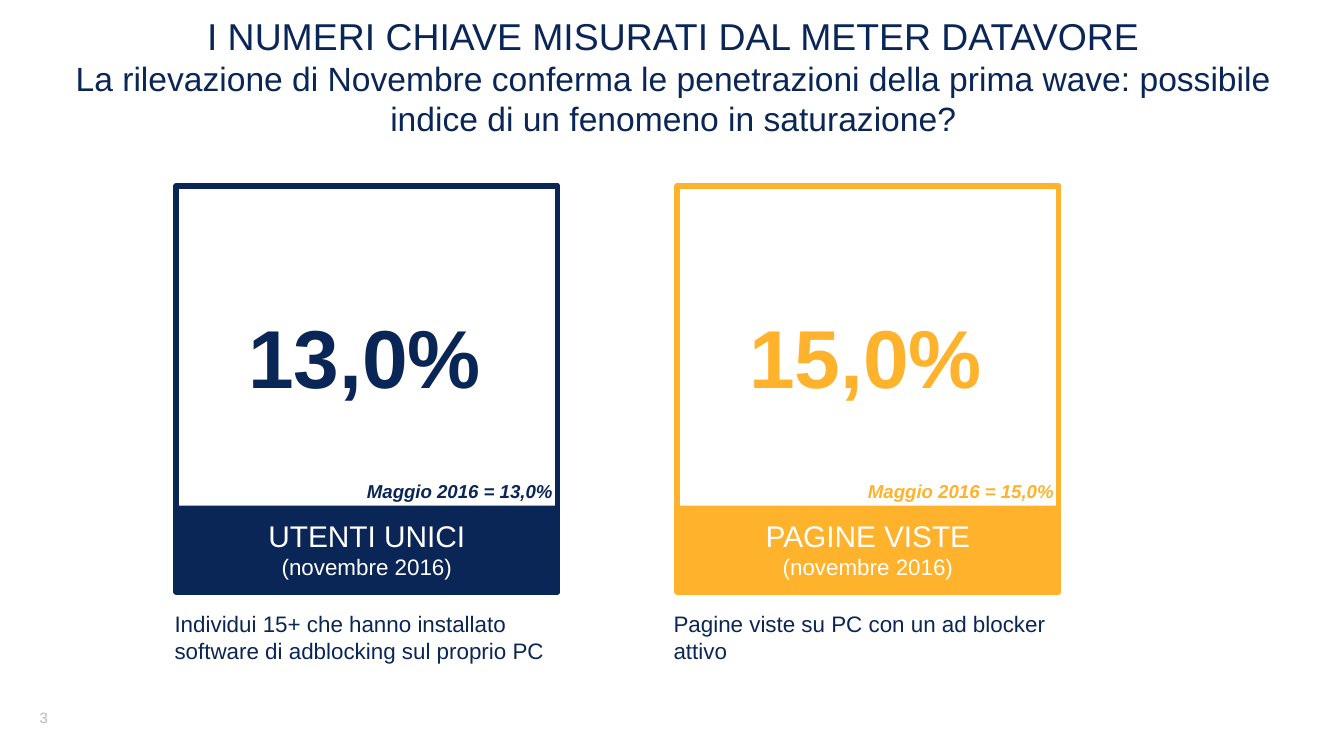
from pptx import Presentation
from pptx.dml.color import RGBColor
from pptx.enum.shapes import MSO_SHAPE as Shape
from pptx.enum.text import MSO_ANCHOR as Anchor, PP_ALIGN as Align
from pptx.util import Cm, Pt

NAVY = RGBColor(0x0A, 0x26, 0x57)
AMBER = RGBColor(0xFF, 0xB2, 0x2B)
WHITE = RGBColor(0xFF, 0xFF, 0xFF)
GREY = RGBColor(0xB9, 0xB9, 0xB9)
FONT = "Arial"

TITLE = "I NUMERI CHIAVE MISURATI DAL METER DATAVORE"
SUBTITLE = ("La rilevazione di Novembre conferma le penetrazioni della prima wave: "
            "possibile indice di un fenomeno in saturazione?")
PAGE_NUMBER = "3"
PERIOD = "(novembre 2016)"
CARDS = [
    {"color": NAVY, "value": "13,0%", "label": "UTENTI UNICI",
     "note": "Maggio 2016 = 13,0%",
     "caption": "Individui 15+ che hanno installato software di adblocking sul proprio PC",
     "caption_box": (3.3, 11.53, 7.24, 1.35)},
    {"color": AMBER, "value": "15,0%", "label": "PAGINE VISTE",
     "note": "Maggio 2016 = 15,0%",
     "caption": "Pagine viste su PC con un ad blocker attivo",
     "caption_box": (12.73, 11.53, 7.49, 1.02)},
]

CARD_LEFT, CARD_TOP, CARD_STEP = 3.33, 3.51, 9.47
CARD_WIDTH, CARD_HEIGHT, BAND_HEIGHT = 7.21, 7.67, 1.63


def style(paragraph, size, color, align=Align.LEFT, bold=False, italic=False):
    font = paragraph.font
    font.name, font.size, font.bold, font.italic = FONT, Pt(size), bold, italic
    font.color.rgb = color
    paragraph.alignment = align


def add_text(slide, box, text, size, color, align=Align.LEFT, inset=0, **emphasis):
    frame = slide.shapes.add_textbox(*map(Cm, box)).text_frame
    frame.word_wrap = True
    frame.margin_left = frame.margin_right = Cm(inset)
    frame.margin_top = frame.margin_bottom = Cm(inset / 2)
    paragraph = frame.paragraphs[0]
    paragraph.text = text
    style(paragraph, size, color, align, **emphasis)
    return frame


def add_rectangle(slide, box):
    shape = slide.shapes.add_shape(Shape.RECTANGLE, *map(Cm, box))
    shape.shadow.inherit = False
    return shape


def add_card(slide, left, card):
    color = card["color"]
    band_top = CARD_TOP + CARD_HEIGHT - BAND_HEIGHT
    band = add_rectangle(slide, (left, band_top, CARD_WIDTH, BAND_HEIGHT))
    band.fill.solid()
    band.fill.fore_color.rgb = color
    band.line.fill.background()
    frame = band.text_frame
    frame.vertical_anchor = Anchor.MIDDLE
    label, period = frame.paragraphs[0], frame.add_paragraph()
    label.text, period.text = card["label"], PERIOD
    style(label, 16, WHITE, Align.CENTER)
    style(period, 12, WHITE, Align.CENTER)

    border = add_rectangle(slide, (left, CARD_TOP, CARD_WIDTH, CARD_HEIGHT))
    border.fill.background()
    border.line.color.rgb = color
    border.line.width = Pt(3)

    add_text(slide, (left + 1.02, 5.79, 5.08, 2.54), card["value"], 44, color,
             Align.CENTER, bold=True)
    add_text(slide, (left + 2.41, 9.07, 4.7, 0.61), card["note"], 10, color,
             Align.RIGHT, bold=True, italic=True)
    add_text(slide, card["caption_box"], card["caption"], 12, NAVY)


presentation = Presentation()
presentation.slide_width, presentation.slide_height = Cm(25.4), Cm(14.28)
slide = presentation.slides.add_slide(presentation.slide_layouts[6])

title = add_text(slide, (1.22, 0.38, 23.01, 2.11), TITLE, 20, NAVY, Align.CENTER)
title.vertical_anchor = Anchor.MIDDLE
heading = title.paragraphs[0]
heading.add_line_break()
subtitle = heading.add_run()
subtitle.text = SUBTITLE
subtitle.font.size = Pt(18)

for index, card in enumerate(CARDS):
    add_card(slide, CARD_LEFT + index * CARD_STEP, card)

add_text(slide, (0.13, 13.26, 1.4, 0.36), PAGE_NUMBER, 8, GREY, Align.CENTER, inset=0.25)

presentation.save("out.pptx")
